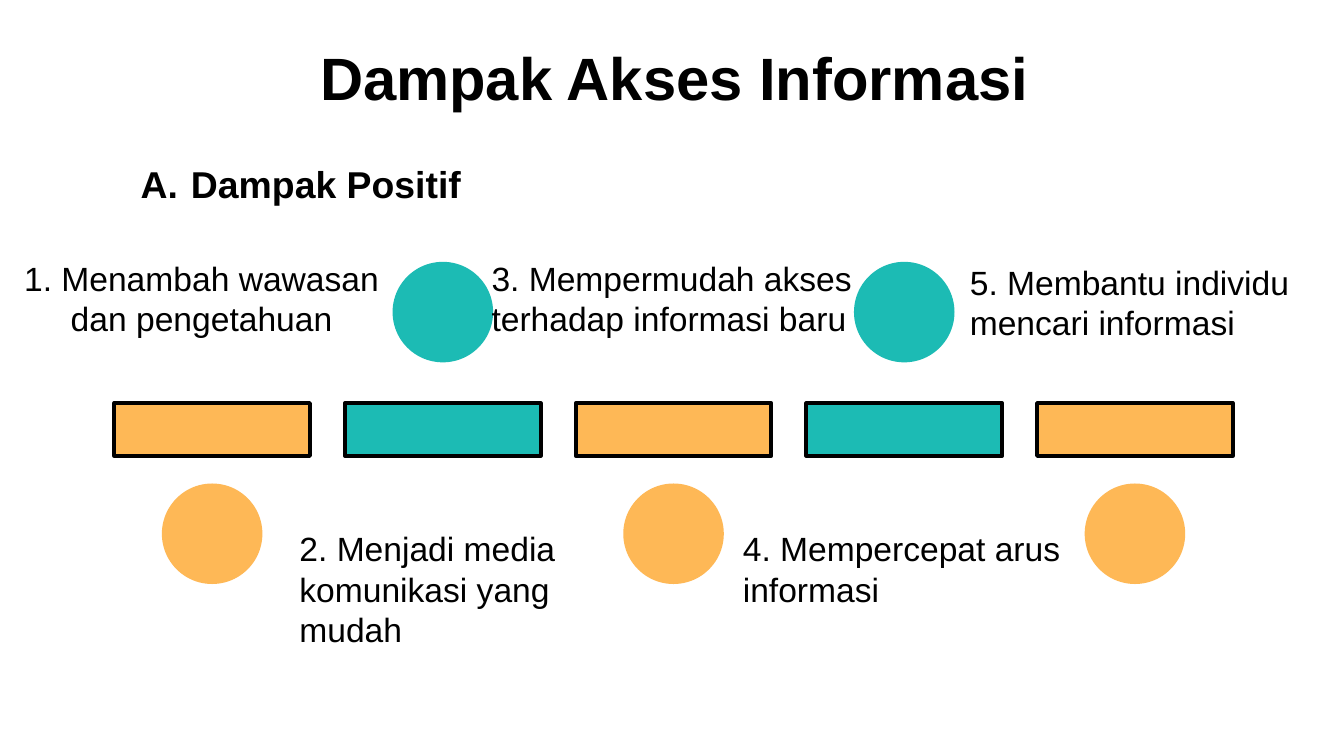
from lxml import etree
from pptx import Presentation
from pptx.dml.color import RGBColor
from pptx.enum.shapes import MSO_SHAPE as Shape
from pptx.enum.text import MSO_ANCHOR as Anchor, PP_ALIGN as Align
from pptx.oxml.ns import qn
from pptx.util import Cm, Pt

ORANGE, TEAL, BLACK = "FEB856", "1CBBB4", "000000"


def color(hex_string):
    return RGBColor.from_string(hex_string)


def add_text(text, left, top, width, height, size=18, bold=False, align=Align.LEFT):
    """Add a wrapped one-paragraph text box and return its text frame."""
    box = slide.shapes.add_textbox(Cm(left), Cm(top), Cm(width), Cm(height))
    frame = box.text_frame
    frame.word_wrap = True
    frame.text = text
    paragraph = frame.paragraphs[0]
    paragraph.alignment = align
    font = paragraph.runs[0].font
    font.name = "Arial"
    font.size = Pt(size)
    font.bold = bold
    font.color.rgb = color(BLACK)
    return frame


presentation = Presentation()
presentation.slide_width = Cm(25.4)
presentation.slide_height = Cm(14.29)
slide = presentation.slides.add_slide(presentation.slide_layouts[6])

title = add_text("Dampak Akses Informasi", 0.05, 0.36, 25.4, 2.16, 32, True, Align.CENTER)
title.vertical_anchor = Anchor.MIDDLE

# Timeline: colours alternate, and circles alternate below and above the bars
first_left, step = 2.16, 4.36
bar_width, bar_height, circle_size = 3.7, 1, 1.9
for index in range(5):
    fill, circle_top = [(ORANGE, 9.14), (TEAL, 4.95)][index % 2]
    bar_left = first_left + index * step
    circle_left = bar_left + (bar_width - circle_size) / 2

    bar = slide.shapes.add_shape(
        Shape.RECTANGLE, Cm(bar_left), Cm(7.62), Cm(bar_width), Cm(bar_height))
    bar.line.color.rgb = color(BLACK)
    bar.line.width = Pt(2)

    circle = slide.shapes.add_shape(
        Shape.OVAL, Cm(circle_left), Cm(circle_top), Cm(circle_size), Cm(circle_size))
    circle.line.fill.background()

    for shape in (bar, circle):
        shape.shadow.inherit = False
        shape.fill.solid()
        shape.fill.fore_color.rgb = color(fill)

impacts = [
    ("1. Menambah wawasan dan pengetahuan", 0.15, 4.75, 7.32, 1.8, Align.CENTER),
    ("2. Menjadi media komunikasi yang mudah", 5.41, 9.86, 5.74, 2.57, Align.LEFT),
    ("3. Mempermudah akses terhadap informasi baru", 9.04, 4.75, 7.42, 1.8, Align.LEFT),
    ("4. Mempercepat arus informasi", 13.79, 9.86, 6.58, 1.8, Align.LEFT),
    ("5. Membantu individu mencari informasi", 18.08, 4.83, 7.21, 1.8, Align.LEFT),
]
for text, left, top, width, height, align in impacts:
    add_text(text, left, top, width, height, align=align)

# Lettered heading with a hanging indent
heading = add_text("Dampak Positif", 2.41, 2.92, 6.91, 1.12, 20, True)
properties = heading.paragraphs[0]._p.get_or_add_pPr()
properties.set("marL", str(Cm(0.95)))
properties.set("indent", str(Cm(-0.95)))
etree.SubElement(properties, qn("a:buAutoNum"), type="alphaUcPeriod")

presentation.save("out.pptx")
